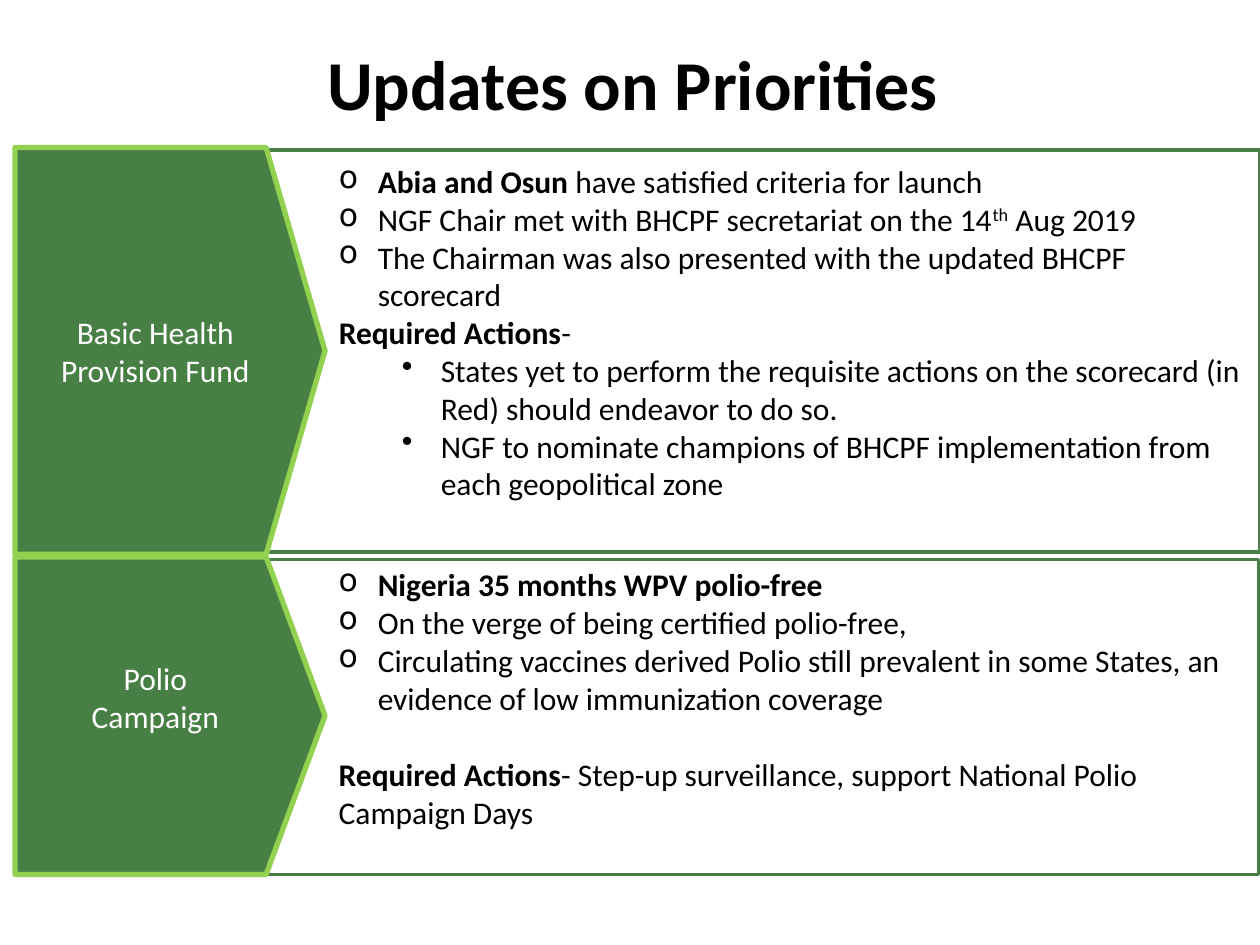
"""Builds a slide of priority updates: a labelled arrow and a framed text per priority."""
from lxml import etree
from pptx import Presentation, util as u
from pptx.dml.color import RGBColor
from pptx.enum import shapes, text
from pptx.oxml.ns import qn

COLORS = {"ink": "000000", "light": "FFFFFF", "green": "477F45", "lime": "92D050"}
COLUMNS, ROWS = 100, 75


def color(name):
    return RGBColor.from_string(COLORS[name])


def write(paragraph, content, size=18, ink="ink", bold=False, raised=False):
    run = paragraph.add_run()
    run.text = content
    font = run.font
    font.name, font.size, font.bold = "Calibri", u.Pt(size), bold
    font.color.rgb = color(ink)
    if raised:
        run._r.get_or_add_rPr().set("baseline", "30000")


class PrioritySlide:
    def __init__(self, presentation):
        self.slide = presentation.slides.add_slide(presentation.slide_layouts[5])
        self.column = presentation.slide_width / COLUMNS
        self.row = presentation.slide_height / ROWS

    def area(self, left, top, width, height):
        return [int(value) for value in (left * self.column, top * self.row,
                                         width * self.column, height * self.row)]

    def title(self, content, *cells):
        shape = self.slide.shapes.title
        shape.left, shape.top, shape.width, shape.height = self.area(*cells)
        frame = shape.text_frame
        frame.vertical_anchor = text.MSO_ANCHOR.TOP
        frame.margin_top = u.Inches(0.08)
        paragraph = frame.paragraphs[0]
        paragraph.alignment = text.PP_ALIGN.CENTER
        write(paragraph, content, size=40, bold=True)

    def outline(self, kind, cells, line, weight, bottom):
        shape = self.slide.shapes.add_shape(kind, *self.area(*cells))
        shape.shadow.inherit = False
        shape.line.color.rgb = color(line)
        shape.line.width = u.Pt(weight)
        frame = shape.text_frame
        frame.word_wrap = True
        frame.vertical_anchor = text.MSO_ANCHOR.MIDDLE
        frame.margin_bottom = u.Inches(bottom)
        return shape

    def paragraphs(self, frame, count):
        return [frame.paragraphs[0]] + [frame.add_paragraph() for _ in range(count - 1)]

    def arrow(self, lines, cells, bottom):
        shape = self.outline(shapes.MSO_SHAPE.PENTAGON, cells, "lime", 3, bottom)
        shape.adjustments[0] = 0.19
        shape.fill.solid()
        shape.fill.fore_color.rgb = color("green")
        for paragraph, line in zip(self.paragraphs(shape.text_frame, len(lines)), lines):
            paragraph.alignment = text.PP_ALIGN.CENTER
            write(paragraph, line, ink="light")

    def panel(self, items, cells):
        shape = self.outline(shapes.MSO_SHAPE.RECTANGLE, cells, "green", 2, 0.35)
        shape.fill.background()
        for paragraph, item in zip(self.paragraphs(shape.text_frame, len(items)), items):
            bullet, gap, *runs = item
            self.indent(paragraph, bullet)
            paragraph.alignment = text.PP_ALIGN.LEFT
            if gap:
                paragraph.space_before = u.Pt(gap)
            for content, style in runs:
                write(paragraph, content, **style)

    def indent(self, paragraph, bullet):
        left, hanging = {"": (0.5, 0), "o": (0.81, -0.31), "•": (1.31, -0.31)}[bullet]
        properties = paragraph._p.get_or_add_pPr()
        properties.set("marL", str(u.Inches(left)))
        properties.set("indent", str(u.Inches(hanging)))
        if bullet:
            etree.SubElement(properties, qn("a:buChar")).set("char", bullet)


def main():
    presentation = Presentation()
    presentation.slide_width, presentation.slide_height = u.Inches(10), u.Inches(7.5)
    page = PrioritySlide(presentation)
    plain, bold = {}, {"bold": True}
    page.title("Updates on Priorities", 5.2, 2.4, 90, 12.5)
    page.panel([
        ("o", 0, ("Nigeria 35 months WPV polio-free", bold)),
        ("o", 0, ("On the verge of being certified polio-free,", plain)),
        ("o", 0, ("Circulating vaccines derived Polio still prevalent in some States, "
                  "an evidence of low immunization coverage", plain)),
        ("", 22, ("Required Actions", bold),
         ("- Step-up surveillance, support National Polio Campaign Days", plain)),
    ], (20.9, 44.4, 79, 25))
    page.arrow(["Polio", "Campaign"], (1.2, 44.2, 24.6, 25.2), 0.35)
    page.panel([
        ("o", 0, ("Abia and Osun ", bold), ("have satisfied criteria for launch", plain)),
        ("o", 0, ("NGF Chair met with BHCPF secretariat on the 14", plain),
         ("th", {"raised": True}), (" Aug 2019", plain)),
        ("o", 0, ("The Chairman was also presented with the updated BHCPF scorecard", plain)),
        ("", 0, ("Required Actions", bold), ("-", plain)),
        ("•", 0, ("States yet to perform the requisite actions on the scorecard "
                  "(in Red) should endeavor to do so.", plain)),
        ("•", 0, ("NGF to nominate champions of BHCPF implementation from "
                  "each geopolitical zone", plain)),
    ], (20.9, 11.9, 79.1, 31.9))
    page.arrow(["Basic Health Provision Fund"], (1.2, 11.7, 24.6, 32.3), 0.05)
    presentation.save("out.pptx")


if __name__ == "__main__":
    main()
